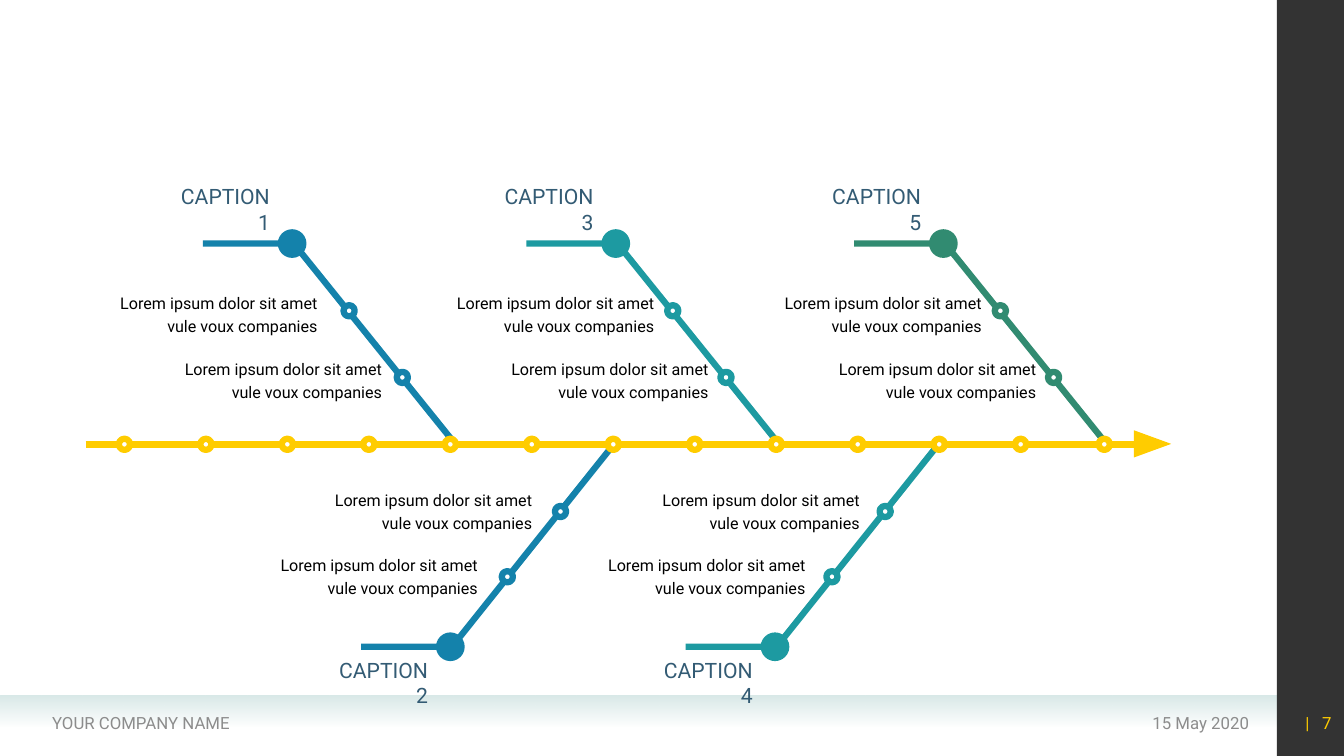
"""Build a fishbone timeline slide with five captioned branches."""
from lxml.etree import SubElement
from pptx import Presentation
from pptx.dml.color import RGBColor
from pptx.enum.shapes import MSO_CONNECTOR as LINK, MSO_SHAPE as FORM
from pptx.enum.text import MSO_ANCHOR as ANCHOR, PP_ALIGN as ALIGN
from pptx.oxml.ns import qn
from pptx.util import Pt

hue = RGBColor.from_string
deck = Presentation()
deck.slide_width, deck.slide_height = Pt(960), Pt(540)
slide = deck.slides.add_slide(deck.slide_layouts[6])
shapes = slide.shapes


def paint(shape, fill, line=None):
    shape.shadow.inherit = False
    if fill:
        shape.fill.solid()
        shape.fill.fore_color.rgb = hue(fill)
    else:
        shape.fill.background()
    if line:
        shape.line.color.rgb = hue(line)
        shape.line.width = Pt(4.5)
    else:
        shape.line.fill.background()


def write(text, left, top, width, height, size, color, align=ALIGN.RIGHT, anchor=ANCHOR.MIDDLE):
    box = shapes.add_textbox(Pt(left), Pt(top), Pt(width), Pt(height))
    frame = box.text_frame
    frame.word_wrap = True
    frame.vertical_anchor = anchor
    frame.text = text
    para = frame.paragraphs[0]
    para.alignment = align
    font = para.runs[0].font
    font.name, font.size = "Roboto", Pt(size)
    font.color.rgb = hue(color)
    return frame


band = shapes.add_shape(FORM.RECTANGLE, 0, Pt(496.8), Pt(912), Pt(22.4))
paint(band, None)
band.fill.gradient()
band.fill.gradient_angle = 270
for stop, place in zip(band.fill.gradient_stops, (0, 1)):
    stop.color.rgb = hue("D9E9E8")
    stop.position = place
side = shapes.add_shape(FORM.RECTANGLE, Pt(912), 0, Pt(48), Pt(540))
paint(side, "000000")
for shape, alpha in ((band, "0"), (side, "80000")):
    tint = list(shape._element.spPr.iter(qn("a:srgbClr")))[-1]
    SubElement(tint, qn("a:alpha")).set("val", alpha)

write("15 May 2020", 655.2, 501.8, 244.1, 28.8, 12, "8C8C8C")
write("YOUR COMPANY NAME", 30.2, 501.8, 352.8, 28.8, 12, "8C8C8C", ALIGN.LEFT)
page = write("| 7", 910.2, 501.8, 48, 28.8, 12, "FFCC00")
page.paragraphs[0].runs[0].font._element.set("spc", "300")

up = (174, 222, 269.6, 206.6, 253.4)
down = (462, 412, 365.4, 393.8, 347)
bones = [
    ("CAPTION 1", 325.4, up, "1482AB", 229.7, 275.8),
    ("CAPTION 2", 438.4, down, "1482AB", 344.2, 383),
    ("CAPTION 3", 556.6, up, "1D9AA1", 470.2, 509),
    ("CAPTION 4", 670.3, down, "1D9AA1", 578.2, 617),
    ("CAPTION 5", 790.6, up, "318B71", 704.2, 743),
]
axis = 317.4
dots = []
for name, tip, rows, color, far, near in bones:
    head, first, second, high, low = rows
    pen = shapes.build_freeform(Pt(tip), Pt(axis))
    pen.add_line_segments([(Pt(tip - 115.5), Pt(head)), (Pt(tip - 180.5), Pt(head))], close=False)
    paint(pen.convert_to_shape(), None, color)
    ball = shapes.add_shape(FORM.OVAL, Pt(tip - 124.7), Pt(head - 8), Pt(16), Pt(16))
    paint(ball, color, color)
    dots += [(tip - 76, first, color), (tip - 38, second, color)]
    top, anchor = (145.8, ANCHOR.BOTTOM) if rows is up else (465.8, ANCHOR.TOP)
    write(name, tip - 208.5, top, 83, 25.2, 15.1, "335B74", anchor=anchor)
    for right, y in ((far, high), (near, low)):
        note = write("Lorem ipsum dolor sit amet vule voux companies",
                     right - 157, y, 157, 34, 11.5, "000000")
        note.margin_left = note.margin_right = Pt(2.9)
        note.margin_top = note.margin_bottom = Pt(1.4)
        para = note.paragraphs[0]
        para.line_spacing, para.space_before = Pt(16.4), Pt(2.3)

line = shapes.add_connector(LINK.STRAIGHT, Pt(61.2), Pt(axis), Pt(816.5), Pt(axis))
line.line.color.rgb = hue("FFCC00")
line.line.width = Pt(4.5)
SubElement(line._element.spPr, qn("a:effectLst"))
arrow = shapes.add_shape(FORM.ISOSCELES_TRIANGLE, Pt(813.6), Pt(303.8), Pt(19.4), Pt(26.6))
arrow.rotation = 90
paint(arrow, "FFCC00")

dots += [(88.9 + 58.2 * i, axis, "FFCC00") for i in range(12)]
dots.append((788.8, axis, "FFCC00"))
for x, y, color in dots:
    dot = shapes.add_shape(FORM.OVAL, Pt(x - 4), Pt(y - 4), Pt(8), Pt(8))
    paint(dot, "FFFFFF", color)

deck.save("out.pptx")
